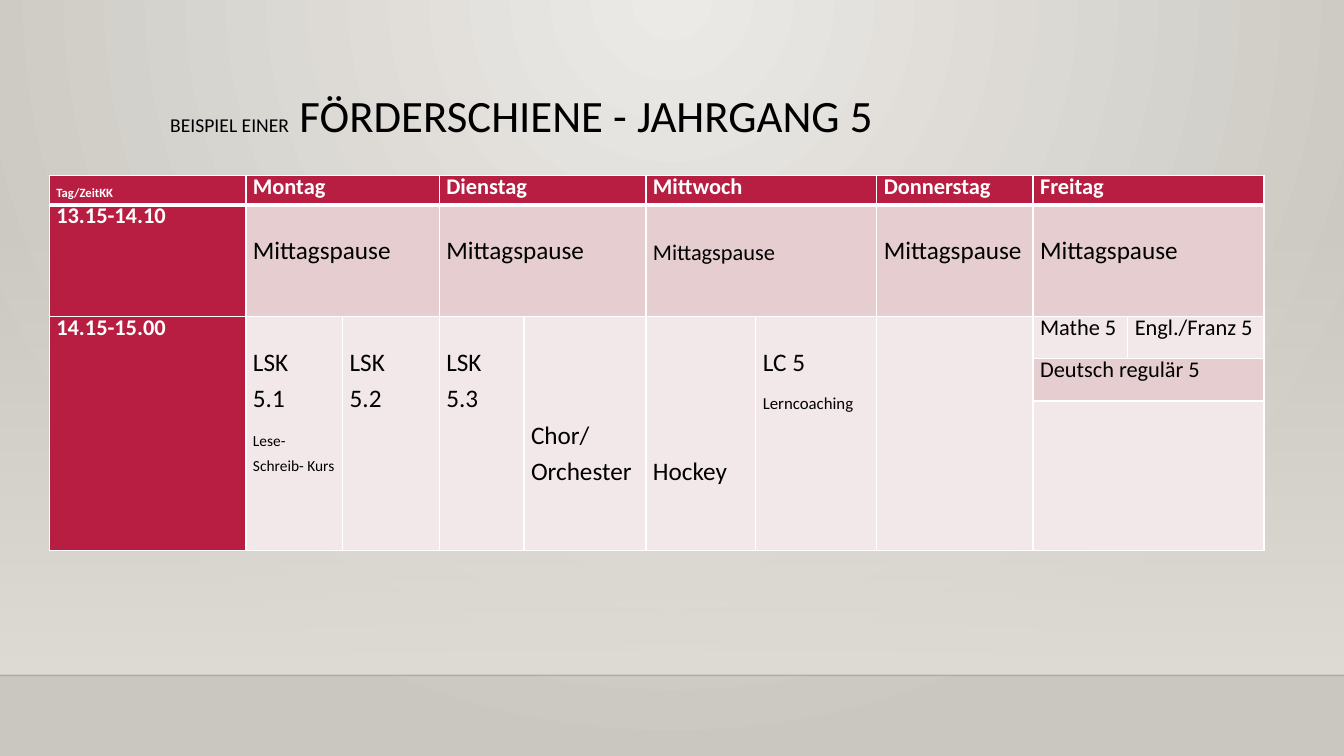
import pptx
import pptx.util
import pptx.dml.color
import pptx.enum.shapes
import pptx.enum.text
import pptx.oxml
import pptx.oxml.ns
from dataclasses import dataclass
from lxml import etree

Pt = pptx.util.Pt
qn = pptx.oxml.ns.qn


@dataclass(frozen=True)
class Theme:
    font: str = "Calibri"
    crimson: str = "B71E42"
    rose: str = "E6CDCF"
    blush: str = "F3E8E9"
    white: str = "FFFFFF"
    black: str = "000000"
    backdrop: tuple = ("ECEAE7", "CAC7C1")
    wall: str = "DFDBD5"
    title: int = 32
    lead: int = 14
    body: int = 18
    label: int = 16
    note: int = 12
    fine: int = 11
    corner: int = 9


THEME = Theme()
SLIDE_W, SLIDE_H = 960, 540
FLOOR_Y = 482.4
LINE, GAP = 18, 8
COLUMNS = [140.4, 69.1, 69.1, 60.5, 87.1, 78.5, 86.4, 111.6, 67.7, 97.2]
ROWS = [20.9, 79.9, 30.2, 30.2, 106.6]
# Weekday, first column, number of columns, size of the break label
DAYS = [
    ("Montag", 1, 2, THEME.body),
    ("Dienstag", 3, 2, THEME.body),
    ("Mittwoch", 5, 2, THEME.label),
    ("Donnerstag", 7, 1, THEME.body),
    ("Freitag", 8, 2, THEME.body),
]
# Courses that fill the whole afternoon: lines to skip, then (text, size)
COURSES = [
    (1, [("LSK", THEME.body), ("5.1", THEME.body), ("Lese-Schreib- Kurs", THEME.fine)]),
    (1, [("LSK", THEME.body), ("5.2", THEME.body)]),
    (1, [("LSK", THEME.body), ("5.3", THEME.body)]),
    (3, [("Chor/", THEME.body), ("Orchester", THEME.body)]),
    (4, [("Hockey", THEME.body)]),
    (1, [("LC 5", THEME.body), ("Lerncoaching", THEME.note)]),
    (0, []),
]


def rgb(color):
    return pptx.dml.color.RGBColor.from_string(color)


def set_alpha(color_element, percent):
    etree.SubElement(color_element, qn("a:alpha"), val=str(percent * 1000))


def set_gradient(fill, colors):
    fill.gradient()
    for stop, color, position in zip(fill.gradient_stops, colors, (0, 1)):
        stop.color.rgb = rgb(color)
        stop.position = position


def add_backdrop(slide):
    # Radial light from the top centre
    set_gradient(slide.background.fill, THEME.backdrop)
    gradient = next(slide.element.iter(qn("a:gradFill")))
    gradient.remove(gradient.find(qn("a:lin")))
    circle = etree.SubElement(gradient, qn("a:path"), path="circle")
    etree.SubElement(circle, qn("a:fillToRect"), l="50000", t="0", r="50000", b="100000")

    # Wall that fades in towards the floor
    wall_y = 159.1
    wall = slide.shapes.add_shape(
        pptx.enum.shapes.MSO_SHAPE.RECTANGLE,
        0, Pt(wall_y), Pt(SLIDE_W), Pt(FLOOR_Y - wall_y))
    wall.shadow.inherit = False
    wall.line.fill.background()
    set_gradient(wall.fill, (THEME.wall, THEME.wall))
    wall.fill.gradient_angle = 270
    set_alpha(next(wall.element.iter(qn("a:srgbClr"))), 0)

    # Floor edge
    edge = slide.shapes.add_connector(
        pptx.enum.shapes.MSO_CONNECTOR.STRAIGHT,
        0, Pt(FLOOR_Y), Pt(SLIDE_W), Pt(FLOOR_Y))
    edge.line.width = Pt(1)
    edge.line.color.rgb = rgb(THEME.black)
    set_alpha(next(edge.element.iter(qn("a:srgbClr"))), 20)
    etree.SubElement(edge.element.spPr, qn("a:effectLst"))


def add_title(slide, lead, heading):
    title = slide.shapes.add_textbox(Pt(114.5), Pt(63.4), Pt(756), Pt(61.9))
    title.text_frame.word_wrap = True
    title.text_frame.vertical_anchor = pptx.enum.text.MSO_ANCHOR.TOP
    paragraph = title.text_frame.paragraphs[0]
    paragraph.line_spacing = 0.9
    paragraph.font.name = THEME.font
    paragraph.font.color.rgb = rgb(THEME.black)
    for text, size in ((lead, THEME.lead), (heading, THEME.title)):
        run = paragraph.add_run()
        run.text = text
        run.font.size = Pt(size)


def set_borders(cell, top, bottom):
    properties = cell._tc.get_or_add_tcPr()
    for side, width in (("L", 1), ("R", 1), ("T", top), ("B", bottom)):
        border = etree.SubElement(properties, qn(f"a:ln{side}"), w=str(Pt(width)))
        fill = etree.SubElement(border, qn("a:solidFill"))
        etree.SubElement(fill, qn("a:srgbClr"), val=THEME.white)


def prepare_cell(cell, row):
    set_borders(cell, top=3 if row == 1 else 1, bottom=3 if row == 0 else 1)
    cell.margin_left = cell.margin_right = Pt(5)
    cell.margin_top = cell.margin_bottom = 0
    cell.text_frame.paragraphs[0].line_spacing = Pt(LINE)


def fill_cell(table, row, col, lines, fill, rows=1, cols=1, skip=0, heading=False):
    cell = table.cell(row, col)
    if rows * cols > 1:
        cell.merge(table.cell(row + rows - 1, col + cols - 1))
    cell.fill.solid()
    cell.fill.fore_color.rgb = rgb(fill)
    cell.margin_top = Pt(skip * (LINE + GAP))
    for index, (text, size) in enumerate(lines):
        frame = cell.text_frame
        paragraph = frame.add_paragraph() if index else frame.paragraphs[0]
        paragraph.text = text
        paragraph.line_spacing = Pt(LINE)
        paragraph.space_after = Pt(GAP)
        paragraph.font.name = THEME.font
        paragraph.font.size = Pt(size)
        paragraph.font.bold = heading
        paragraph.font.color.rgb = rgb(THEME.white if heading else THEME.black)


def add_timetable(slide):
    timetable = slide.shapes.add_table(
        len(ROWS), len(COLUMNS), Pt(35.3), Pt(125.3), Pt(sum(COLUMNS)), Pt(sum(ROWS))).table
    timetable.horz_banding = False
    for column, width in zip(timetable.columns, COLUMNS):
        column.width = Pt(width)
    for index, (row, height) in enumerate(zip(timetable.rows, ROWS)):
        row.height = Pt(height)
        for cell in row.cells:
            prepare_cell(cell, index)

    # Times
    times = [("Tag/ZeitKK", THEME.corner, 1), ("13.15-14.10", THEME.label, 1),
             ("14.15-15.00", THEME.label, 3)]
    for row, (time, size, span) in enumerate(times):
        fill_cell(timetable, row, 0, [(time, size)], THEME.crimson, rows=span, heading=True)

    # Weekdays and lunch breaks
    for day, col, span, size in DAYS:
        fill_cell(timetable, 0, col, [(day, THEME.label)], THEME.crimson, cols=span, heading=True)
        fill_cell(timetable, 1, col, [("Mittagspause", size)], THEME.rose, cols=span, skip=1)

    # Afternoon courses
    for col, (skip, lines) in enumerate(COURSES, start=1):
        fill_cell(timetable, 2, col, lines, THEME.blush, rows=3, skip=skip)

    # Friday lessons
    fill_cell(timetable, 2, 8, [("Mathe 5", THEME.label)], THEME.blush)
    fill_cell(timetable, 2, 9, [("Engl./Franz 5", THEME.label)], THEME.blush)
    fill_cell(timetable, 3, 8, [("Deutsch regulär 5", THEME.label)], THEME.rose, cols=2)
    fill_cell(timetable, 4, 8, [], THEME.blush, cols=2)


def main():
    deck = pptx.Presentation()
    deck.slide_width, deck.slide_height = Pt(SLIDE_W), Pt(SLIDE_H)
    slide = deck.slides.add_slide(deck.slide_layouts[6])
    add_backdrop(slide)
    add_title(slide, "BEISPIEL EINER", " FÖRDERSCHIENE - JAHRGANG 5")
    add_timetable(slide)
    deck.save("out.pptx")


if __name__ == "__main__":
    main()
